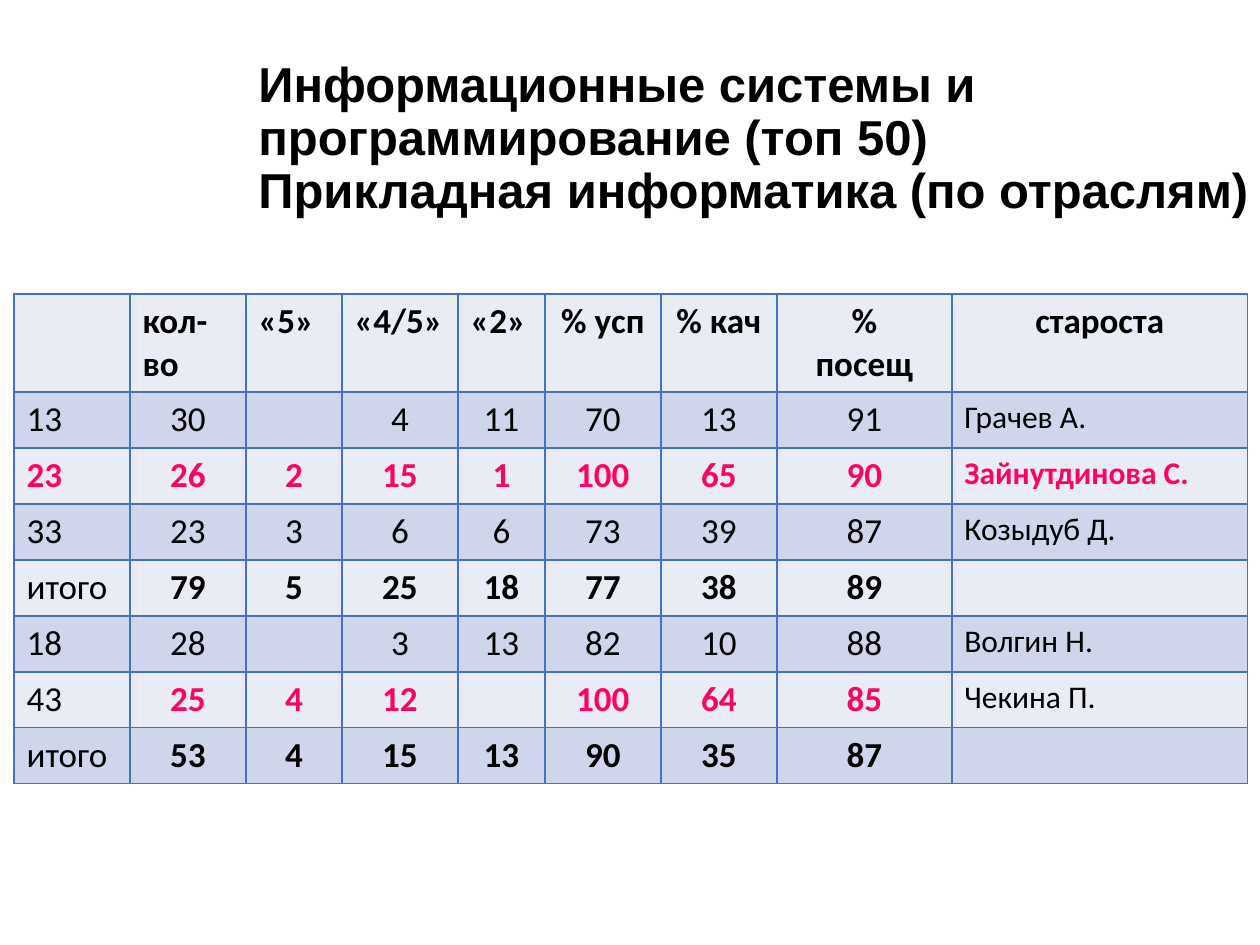
"""Build a slide with a table of student group results."""
from lxml.etree import SubElement
from pptx import Presentation
from pptx.dml.color import RGBColor
from pptx.enum.text import MSO_ANCHOR, PP_ALIGN
from pptx.oxml.ns import qn
from pptx.util import Emu, Pt

PX = 914400 // 126
BLACK = RGBColor(0x00, 0x00, 0x00)
PINK = RGBColor(0xFF, 0x00, 0x66)
BLUE = RGBColor(0x44, 0x72, 0xC4)
PALE = RGBColor(0xE9, 0xEB, 0xF5)
TINT = RGBColor(0xCF, 0xD5, 0xEA)

PLAIN = {"bold": False, "color": BLACK}
STRONG = {"bold": True, "color": BLACK}
LEADER = {"bold": True, "color": PINK}

TITLE = ("Информационные системы и программирование (топ 50)\v"
         "Прикладная информатика (по отраслям)")
COLUMNS = [116, 116, 96, 116, 87, 116, 116, 175, 296]
HEADER_HEIGHT, ROW_HEIGHT = 98, 56
HEADER = ["", "кол-во", "«5»", "«4/5»", "«2»", "% усп", "% кач", "%\nпосещ", "староста"]
FIRST_CENTRED_HEADER = 5
GROUPS = [
    (["13", "30", "", "4", "11", "70", "13", "91", "Грачев А."], PLAIN, PLAIN),
    (["23", "26", "2", "15", "1", "100", "65", "90", "Зайнутдинова С."], LEADER, LEADER),
    (["33", "23", "3", "6", "6", "73", "39", "87", "Козыдуб Д."], PLAIN, PLAIN),
    (["итого", "79", "5", "25", "18", "77", "38", "89", ""], PLAIN, STRONG),
    (["18", "28", "", "3", "13", "82", "10", "88", "Волгин Н."], PLAIN, PLAIN),
    (["43", "25", "4", "12", "", "100", "64", "85", "Чекина П."], PLAIN, LEADER),
    (["итого", "53", "4", "15", "13", "90", "35", "87", ""], PLAIN, STRONG),
]


class Page:
    def __init__(self, deck):
        self.slide = deck.slides.add_slide(deck.slide_layouts[6])
        self.title_font = {"name": "Arial", "size": Pt(28)}
        self.table_font = {"name": "Calibri", "size": Pt(20)}

    def fill_text(self, frame, text, align, color, **font):
        frame.text = text
        for paragraph in frame.paragraphs:
            paragraph.alignment = align
            for span in paragraph.runs:
                for name, value in font.items():
                    setattr(span.font, name, value)
                span.font.color.rgb = color

    def title(self, text, left, top, width, height):
        box = self.slide.shapes.add_textbox(*(Emu(n * PX) for n in (left, top, width, height)))
        frame = box.text_frame
        frame.word_wrap = True
        frame.vertical_anchor = MSO_ANCHOR.MIDDLE
        self.fill_text(frame, text, PP_ALIGN.LEFT, **self.title_font, **STRONG)
        frame.paragraphs[0].line_spacing = 0.9

    def table(self, left, top, widths, heights):
        size = (left, top, sum(widths), sum(heights))
        table = self.slide.shapes.add_table(
            len(heights), len(widths), *(Emu(n * PX) for n in size)).table
        for column, width in zip(table.columns, widths):
            column.width = Emu(width * PX)
        for row, height in zip(table.rows, heights):
            row.height = Emu(height * PX)
        return table

    def cell(self, cell, text, fill, align, style, **font):
        self.fill_text(cell.text_frame, text, align, **{**self.table_font, **style, **font})
        properties = cell._tc.get_or_add_tcPr()
        for side in ("a:lnL", "a:lnR", "a:lnT", "a:lnB"):
            line = SubElement(properties, qn(side), w=str(Pt(1)))
            SubElement(SubElement(line, qn("a:solidFill")), qn("a:srgbClr"), val=str(BLUE))
        cell.fill.solid()
        cell.fill.fore_color.rgb = fill


def main():
    deck = Presentation()
    deck.slide_width, deck.slide_height = Emu(1260 * PX), Emu(945 * PX)
    page = Page(deck)
    page.title(TITLE, 246, 49, 1131, 181)
    table = page.table(14, 294, COLUMNS, [HEADER_HEIGHT] + [ROW_HEIGHT] * len(GROUPS))
    for index, text in enumerate(HEADER):
        align = PP_ALIGN.CENTER if index >= FIRST_CENTRED_HEADER else PP_ALIGN.LEFT
        page.cell(table.cell(0, index), text, PALE, align, STRONG)
    last = len(COLUMNS) - 1
    for number, (values, edge, body) in enumerate(GROUPS, 1):
        fill = TINT if number % 2 else PALE
        for index, text in enumerate(values):
            outer = index in (0, last)
            align = PP_ALIGN.LEFT if outer else PP_ALIGN.CENTER
            size = Pt(18) if index == last else Pt(20)
            page.cell(table.cell(number, index), text, fill, align,
                      edge if outer else body, size=size)
    deck.save("out.pptx")


if __name__ == "__main__":
    main()
